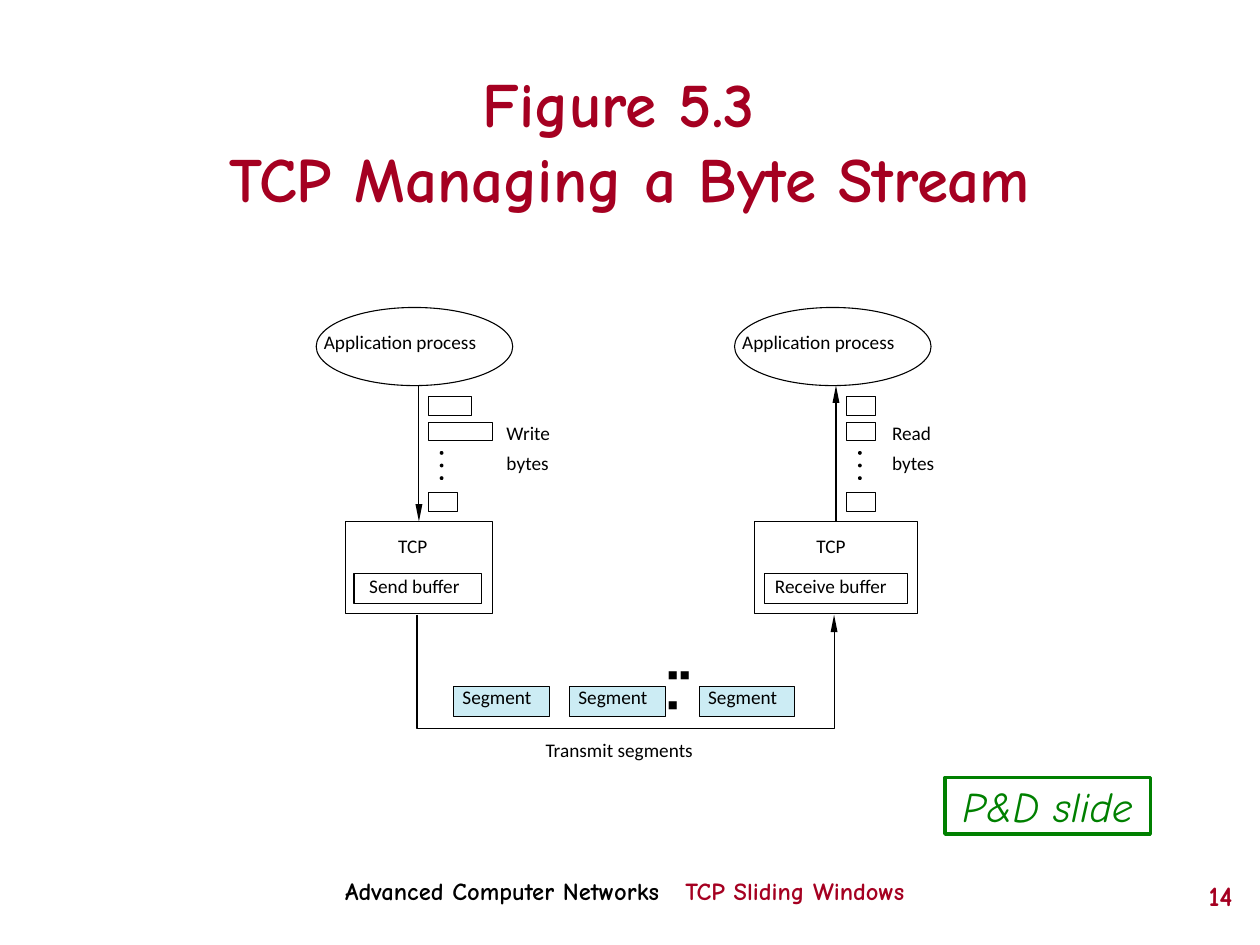
from dataclasses import dataclass

import pptx
import pptx.dml.color
import pptx.enum.shapes
import pptx.enum.text
import pptx.oxml.ns
import pptx.util
from lxml import etree
from pptx.util import Inches

SHAPE = pptx.enum.shapes.MSO_SHAPE
ALIGN = pptx.enum.text.PP_ALIGN
ANCHOR = pptx.enum.text.MSO_ANCHOR


@dataclass(frozen=True)
class Theme:
    black: str = "000000"
    white: str = "FFFFFF"
    red: str = "A50021"
    green: str = "008000"
    segment: str = "CCECF4"
    display: str = "Comic Neue"
    label: str = "Calibri"
    title_size: float = 36
    tag_size: float = 24
    number_size: float = 16
    footer_size: float = 14
    label_size: float = 11
    dot_size: float = 6
    thin: float = 0.63
    thick: float = 2


THEME = Theme()


def rgb(value):
    return pptx.dml.color.RGBColor.from_string(value)


def style_run(run, size, color=THEME.black, name=THEME.label, bold=False, italic=False):
    run.font.size = pptx.util.Pt(size)
    run.font.color.rgb = rgb(color)
    run.font.name = name
    run.font.bold = bold
    run.font.italic = italic


def set_line(line, color=THEME.black, width=THEME.thin):
    line.color.rgb = rgb(color)
    line.width = pptx.util.Pt(width)


def add_box(slide, left, top, width, height, fill=None, kind=SHAPE.RECTANGLE):
    shape = slide.shapes.add_shape(
        kind, Inches(left), Inches(top), Inches(width), Inches(height))
    shape.shadow.inherit = False
    if fill:
        shape.fill.solid()
        shape.fill.fore_color.rgb = rgb(fill)
    else:
        shape.fill.background()
    set_line(shape.line)
    return shape


def add_text(slide, left, top, width, height, wrap=True):
    box = slide.shapes.add_textbox(
        Inches(left), Inches(top), Inches(width), Inches(height))
    box.text_frame.word_wrap = wrap
    return box.text_frame


def clear_margins(frame):
    frame.margin_left = frame.margin_right = 0
    frame.margin_top = frame.margin_bottom = 0


def add_label(slide, left, top, width, text):
    frame = add_text(slide, left, top, width, 0.18, wrap=False)
    clear_margins(frame)
    frame.text = text
    style_run(frame.paragraphs[0].runs[0], THEME.label_size)


def add_arrowhead(line, end):
    properties = line._get_or_add_ln()
    etree.SubElement(properties, pptx.oxml.ns.qn(f"a:{end}"),
                     type="triangle", w="sm", len="lg")


def add_title(slide, left, top, width, height):
    frame = add_text(slide, left, top, width, height)
    frame.vertical_anchor = ANCHOR.MIDDLE
    paragraph = frame.paragraphs[0]
    paragraph.text = "Figure 5.3 \vTCP Managing a Byte Stream"
    paragraph.alignment = ALIGN.CENTER
    for run in paragraph.runs:
        style_run(run, THEME.title_size, THEME.red, THEME.display, bold=True)


def add_endpoint(slide, left, top, tcp, buffer, buffer_label, byte_boxes, action, arrow_end):
    """One host: application process, byte stream and TCP with its buffer."""
    # Application process
    add_box(slide, left, top, 1.56, 0.62, THEME.white, SHAPE.OVAL)
    add_label(slide, left + 0.06, top + 0.18, 1.33, "Application process")

    # TCP module and its buffer
    tcp_left, tcp_width = tcp
    tcp_box = add_box(slide, tcp_left, top + 1.7, tcp_width, 0.73, THEME.white)
    add_label(slide, left + 0.65, top + 1.8, 0.31, "TCP")
    buffer_left, buffer_width = buffer
    add_box(slide, buffer_left, top + 2.11, buffer_width, 0.24)
    add_label(slide, *buffer_label[:1], top + 2.12, *buffer_label[1:])

    # Bytes between the process and TCP
    for offset, width in zip((0.71, 0.91, 1.47), byte_boxes):
        add_box(slide, left + 0.89, top + offset, width, 0.15)
    for index in range(3):
        dot = add_box(slide, left + 0.98, top + 1.14 + 0.1 * index,
                      0.03, 0.03, THEME.black, SHAPE.OVAL)
        dot.line.fill.background()
    action_left, action_text = action
    for offset, text in ((0.9, action_text), (1.14, "bytes")):
        add_label(slide, action_left, top + offset, 0.37, text)

    # Stream arrow, joined to the top of TCP
    center = Inches(tcp_left + tcp_width / 2)
    connector = slide.shapes.add_connector(
        pptx.enum.shapes.MSO_CONNECTOR.STRAIGHT,
        center, Inches(top + 0.62), center, Inches(top + 1.7))
    connector.end_connect(tcp_box, 0)
    set_line(connector.line)
    add_arrowhead(connector.line, arrow_end)
    etree.SubElement(connector._element.spPr, pptx.oxml.ns.qn("a:effectLst"))


def add_transmission(slide, left, top, width, height):
    """Segments travelling along the path from sender to receiver."""
    # Segments
    for offset in (0.29, 1.21, 2.24):
        add_box(slide, left + offset, top + 0.57, 0.76, 0.24, THEME.segment)
        add_label(slide, left + offset + 0.07, top + 0.56, 0.61, "Segment")

    # Path
    builder = slide.shapes.build_freeform(Inches(left), Inches(top))
    builder.add_line_segments([
        (Inches(left), Inches(top + height)),
        (Inches(left + width), Inches(top + height)),
        (Inches(left + width), Inches(top)),
    ], close=False)
    route = builder.convert_to_shape()
    route.shadow.inherit = False
    route.fill.background()
    set_line(route.line)
    add_arrowhead(route.line, "tailEnd")
    add_label(slide, left + 1.02, top + 0.98, 1.3, "Transmit segments")

    # More segments; the large closing space sets the second line's height
    frame = add_text(slide, left + 1.99, top + 0.42, 0.26, 0.27)
    clear_margins(frame)
    paragraph = frame.paragraphs[0]
    for text, size in (("■ ■ ■", THEME.dot_size), (" ", THEME.number_size)):
        run = paragraph.add_run()
        run.text = text
        style_run(run, size)


def add_tag(slide, left, top, width, height):
    tag = add_box(slide, left, top, width, height)
    set_line(tag.line, THEME.green, THEME.thick)
    frame = tag.text_frame
    frame.word_wrap = False
    frame.vertical_anchor = ANCHOR.MIDDLE
    frame.text = "P&D slide"
    frame.paragraphs[0].alignment = ALIGN.CENTER
    style_run(frame.paragraphs[0].runs[0], THEME.tag_size, THEME.green,
              THEME.display, italic=True)


def add_footer(slide, left, top, width, height):
    # Course and topic, set apart by a tab stop
    paragraph = add_text(slide, left, top, width, height).paragraphs[0]
    properties = paragraph._p.get_or_add_pPr()
    tabs = etree.SubElement(properties, pptx.oxml.ns.qn("a:tabLst"))
    etree.SubElement(tabs, pptx.oxml.ns.qn("a:tab"), pos=str(Inches(2.7)), algn="l")
    for text, color in (("Advanced Computer Networks\t", THEME.black),
                        ("TCP Sliding Windows", THEME.red)):
        run = paragraph.add_run()
        run.text = text
        style_run(run, THEME.footer_size, color, THEME.display, bold=True)

    # Slide number
    frame = add_text(slide, left + 6.2, top + 0.02, 1.04, 0.5)
    frame.text = "14"
    frame.paragraphs[0].alignment = ALIGN.RIGHT
    style_run(frame.paragraphs[0].runs[0], THEME.number_size, THEME.red,
              THEME.display, bold=True)


def main():
    presentation = pptx.Presentation()
    presentation.slide_width, presentation.slide_height = Inches(10), Inches(7.5)
    slide = presentation.slides.add_slide(presentation.slide_layouts[6])

    add_endpoint(slide, 2.51, 2.44, tcp=(2.74, 1.17), buffer=(2.81, 1.01),
                 buffer_label=(2.93, 0.79, "Send buffer"),
                 byte_boxes=(0.34, 0.51, 0.23), action=(4.02, "Write"),
                 arrow_end="tailEnd")
    add_endpoint(slide, 5.83, 2.44, tcp=(5.99, 1.29), buffer=(6.07, 1.13),
                 buffer_label=(6.15, 0.98, "Receive buffer"),
                 byte_boxes=(0.23, 0.23, 0.23), action=(7.08, "Read"),
                 arrow_end="headEnd")
    add_transmission(slide, 3.31, 4.88, 3.31, 0.9)
    add_title(slide, 0.59, 0.36, 8.82, 1.5)
    add_tag(slide, 7.5, 6.17, 1.63, 0.45)
    add_footer(slide, 2.64, 6.9, 5.28, 0.39)

    presentation.save("out.pptx")


if __name__ == "__main__":
    main()
